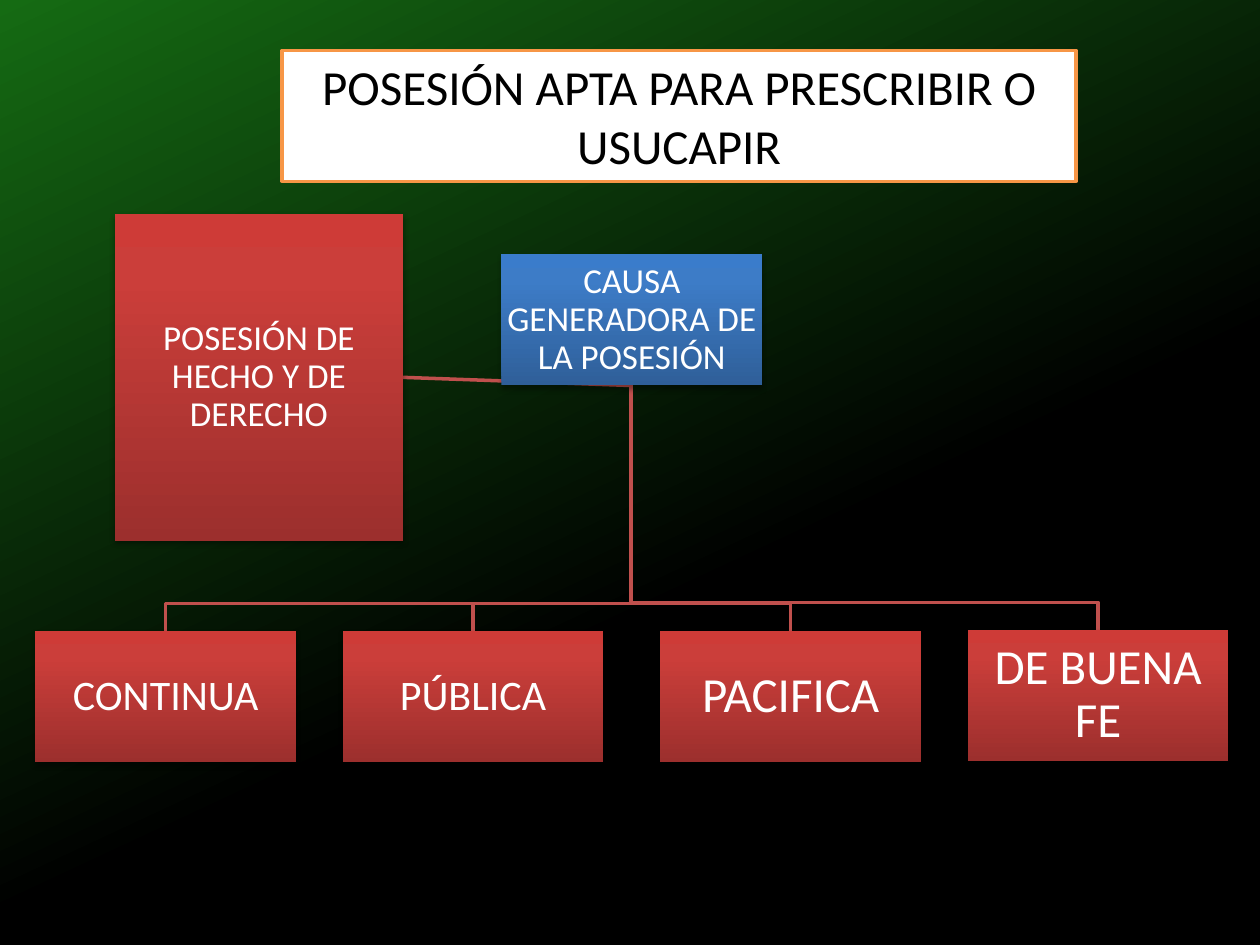
from lxml.etree import SubElement
from pptx import Presentation
from pptx.dml.color import RGBColor
from pptx.enum.shapes import MSO_CONNECTOR as Connector, MSO_SHAPE as Shape
from pptx.enum.text import MSO_ANCHOR as Anchor, MSO_AUTO_SIZE as AutoSize, PP_ALIGN as Align
from pptx.oxml.ns import qn
from pptx.util import Inches, Pt

RED = [(0, "9C2F2D"), (80, "CB3E3A"), (100, "CE3B37")]
BLUE = [(0, "2F5F99"), (80, "3D7CC7"), (100, "3A7CCB")]
BACKGROUND = [(40, "000000"), (100, "156B13")]
LINE_COLOR = "C0504D"
BOX_WIDTH, BOX_HEIGHT = 2.07, 1.04
QUALITIES = [
    ("CONTINUA", 0.28, 5.01, 24),
    ("PÚBLICA", 2.72, 5.01, 24),
    ("PACIFICA", 5.24, 5.01, 28),
    ("DE BUENA FE", 7.68, 5, 28),
]


def color(hex_string):
    """Turn a hex string into a colour."""
    return RGBColor.from_string(hex_string)


def apply_format(target, values):
    """Set every attribute of a format dict on the target."""
    for name, value in values.items():
        setattr(target, name, value)


def paint_gradient(fill, element, stops, angle):
    """Fill with a linear gradient of (percent, colour) stops at a clockwise angle."""
    fill.gradient()
    fill.gradient_angle = 360 - angle
    stop_list = element.find(".//" + qn("a:gsLst"))
    for old_stop in list(stop_list):
        stop_list.remove(old_stop)
    for percent, hex_string in stops:
        stop = SubElement(stop_list, qn("a:gs"), pos=str(percent * 1000))
        SubElement(stop, qn("a:srgbClr"), val=hex_string)


def add_shadow(shape, opacity, distance):
    """Give the shape a soft shadow that falls straight down."""
    effects = shape.element.spPr.find(qn("a:effectLst"))
    shadow = SubElement(effects, qn("a:outerShdw"), blurRad=str(Pt(3.1)),
                        dist=str(Pt(distance)), dir="5400000", rotWithShape="0")
    black = SubElement(shadow, qn("a:srgbClr"), val="000000")
    SubElement(black, qn("a:alpha"), val=str(opacity * 1000))


def style_line(line, hex_string):
    """Draw a two point line in the given colour."""
    line.color.rgb = color(hex_string)
    line.width = Pt(2)


def add_rectangle(slide, text, bounds, size, hex_string, frame_format, spacing):
    """Add a rectangle with centred text."""
    shape = slide.shapes.add_shape(Shape.RECTANGLE, *map(Inches, bounds))
    shape.shadow.inherit = False
    apply_format(shape.text_frame, {"word_wrap": True, **frame_format})
    paragraph = shape.text_frame.paragraphs[0]
    apply_format(paragraph, {"text": text, "alignment": Align.CENTER, "line_spacing": spacing})
    font = paragraph.runs[0].font
    apply_format(font, {"name": "Calibri", "size": Pt(size)})
    font.color.rgb = color(hex_string)
    return shape


def add_box(slide, text, bounds, size, stops=RED, shadow=(38, 1.6), inset=0.02):
    """Add a shaded diagram box with white text."""
    sides = ("left", "top", "right", "bottom")
    frame_format = {"margin_" + side: Inches(inset) for side in sides}
    frame_format["vertical_anchor"] = Anchor.MIDDLE
    shape = add_rectangle(slide, text, bounds, size, "FFFFFF", frame_format, 0.9)
    paint_gradient(shape.fill, shape.element, stops, 270)
    shape.line.fill.background()
    add_shadow(shape, *shadow)
    return shape


def add_title(slide, text):
    """Add the white title box with its orange border."""
    frame_format = {"vertical_anchor": Anchor.TOP, "auto_size": AutoSize.SHAPE_TO_FIT_TEXT}
    shape = add_rectangle(slide, text, (2.24, 0.4, 6.3, 1.04), 28, "000000", frame_format, 1.0)
    shape.fill.solid()
    shape.fill.fore_color.rgb = color("FFFFFF")
    style_line(shape.line, "F79646")


def add_branch(slide, start, end):
    """Add an open line that goes down, across and down to a box."""
    bend = end[1] - 0.22
    points = [(start[0], bend), (end[0], bend), end]
    builder = slide.shapes.build_freeform(*map(Inches, start))
    builder.add_line_segments([tuple(map(Inches, point)) for point in points], close=False)
    shape = builder.convert_to_shape()
    shape.shadow.inherit = False
    shape.fill.background()
    style_line(shape.line, LINE_COLOR)


def add_link(slide, start, end):
    """Add a straight connector without shadow."""
    points = map(Inches, (*start, *end))
    connector = slide.shapes.add_connector(Connector.STRAIGHT, *points)
    SubElement(connector.element.spPr, qn("a:effectLst"))
    style_line(connector.line, LINE_COLOR)
    return connector


def main():
    """Build the slide and save it."""
    presentation = Presentation()
    apply_format(presentation, {"slide_width": Inches(10), "slide_height": Inches(7.5)})
    slide = presentation.slides.add_slide(presentation.slide_layouts[6])
    paint_gradient(slide.background.fill, slide.element, BACKGROUND, 245)

    cause_bottom = (5.01, 3.05)
    link = add_link(slide, cause_bottom, (3.19, 3))
    for _, left, top, _ in reversed(QUALITIES):
        add_branch(slide, cause_bottom, (left + BOX_WIDTH / 2, top))

    cause = add_box(slide, "CAUSA GENERADORA DE LA POSESIÓN", (3.98, 2.02, BOX_WIDTH, BOX_HEIGHT),
                    20, BLUE, (35, 1.8), 0.01)
    for text, left, top, size in QUALITIES:
        add_box(slide, text, (left, top, BOX_WIDTH, BOX_HEIGHT), size)
    possession = add_box(slide, "POSESIÓN DE HECHO Y DE DERECHO", (0.91, 1.7, 2.29, 2.59),
                         20, inset=0.01)
    link.begin_connect(cause, 2)
    link.end_connect(possession, 3)
    add_title(slide, "POSESIÓN APTA PARA PRESCRIBIR O USUCAPIR")
    presentation.save("out.pptx")


if __name__ == "__main__":
    main()
